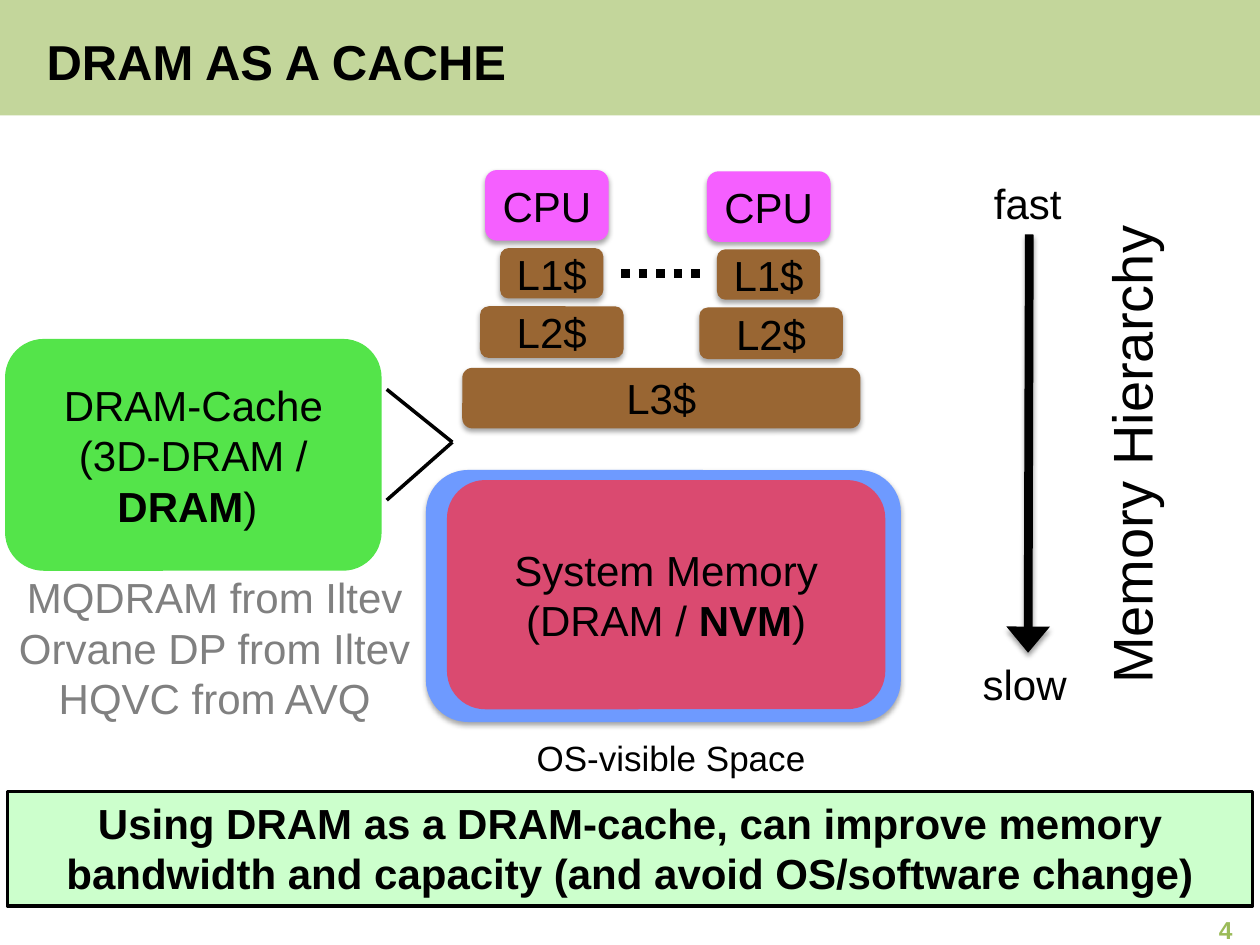
from dataclasses import dataclass
from typing import Optional

from lxml import etree
from pptx import Presentation
from pptx.dml.color import RGBColor
from pptx.enum.dml import MSO_LINE
from pptx.enum.shapes import MSO_CONNECTOR, MSO_SHAPE
from pptx.enum.text import MSO_ANCHOR, PP_ALIGN
from pptx.oxml.ns import qn
from pptx.util import Pt

RECTANGLE, ROUNDED = MSO_SHAPE.RECTANGLE, MSO_SHAPE.ROUNDED_RECTANGLE
STRAIGHT = MSO_CONNECTOR.STRAIGHT
DOTTED = MSO_LINE.ROUND_DOT
TOP, MIDDLE = MSO_ANCHOR.TOP, MSO_ANCHOR.MIDDLE
LEFT, CENTER, RIGHT = PP_ALIGN.LEFT, PP_ALIGN.CENTER, PP_ALIGN.RIGHT

COLORS = {
    "black": "000000", "band": "C3D69B", "visible": "6E9AFF",
    "memory": "FF3041", "dram": "54E44A", "cpu": "F55FFF",
    "cache": "996633", "banner": "CCFFCC", "gray": "808080",
    "number": "9BBB59",
}


@dataclass
class Text:
    """Lines of text; a line is a list of (words, bold) runs."""
    lines: list
    size: float = 24
    color: str = "black"
    align: PP_ALIGN = CENTER
    anchor: MSO_ANCHOR = MIDDLE
    wrap: bool = True


@dataclass
class Box:
    """A filled shape, or a plain text box when it has no fill."""
    frame: tuple
    text: Optional[Text] = None
    fill: Optional[str] = None
    kind: MSO_SHAPE = ROUNDED
    outline: float = 0
    shadow: bool = False
    opacity: int = 100
    rotation: float = 0


@dataclass
class Line:
    start: tuple
    end: tuple
    width: float = 2
    dotted: bool = False
    arrow: bool = False


def rgb(name: str) -> RGBColor:
    return RGBColor.from_string(COLORS[name])


def plain(*lines: str, bold: bool = False) -> list:
    return [[(line, bold)] for line in lines]


def add_shadow(effects, opacity: int) -> None:
    shadow = etree.SubElement(effects, qn("a:outerShdw"), blurRad=str(Pt(3.1)),
                              dist=str(Pt(1.8)), dir="5400000", rotWithShape="0")
    color = etree.SubElement(shadow, qn("a:srgbClr"), val=COLORS["black"])
    etree.SubElement(color, qn("a:alpha"), val=str(opacity * 1000))


def write_text(shape, text: Text) -> None:
    frame = shape.text_frame
    frame.word_wrap = text.wrap
    frame.vertical_anchor = text.anchor
    for index, line in enumerate(text.lines):
        paragraph = frame.add_paragraph() if index else frame.paragraphs[0]
        paragraph.alignment = text.align
        for words, bold in line:
            run = paragraph.add_run()
            run.text = words
            font_format = {"name": "Arial", "size": Pt(text.size), "bold": bold}
            for attribute, value in font_format.items():
                setattr(run.font, attribute, value)
            run.font.color.rgb = rgb(text.color)


def draw_box(slide, box: Box) -> None:
    frame = [Pt(value) for value in box.frame]
    if box.fill is None:
        shape = slide.shapes.add_textbox(*frame)
    else:
        shape = slide.shapes.add_shape(box.kind, *frame)
        shape.fill.solid()
        shape.fill.fore_color.rgb = rgb(box.fill)
        if box.opacity < 100:
            color = shape._element.spPr.find(".//" + qn("a:srgbClr"))
            etree.SubElement(color, qn("a:alpha"), val=str(box.opacity * 1000))
        if box.outline:
            shape.line.color.rgb = rgb("black")
            shape.line.width = Pt(box.outline)
        else:
            shape.line.fill.background()
        shape.shadow.inherit = False
        if box.shadow:
            add_shadow(shape._element.spPr.find(qn("a:effectLst")), 35)
    shape.rotation = box.rotation
    if box.text:
        write_text(shape, box.text)


def draw_line(slide, line: Line) -> None:
    points = [Pt(value) for value in line.start + line.end]
    connector = slide.shapes.add_connector(STRAIGHT, *points)
    connector.line.color.rgb = rgb("black")
    connector.line.width = Pt(line.width)
    if line.dotted:
        connector.line.dash_style = DOTTED
    effects = etree.SubElement(connector._element.spPr, qn("a:effectLst"))
    if line.arrow:
        etree.SubElement(connector.line._get_or_add_ln(), qn("a:tailEnd"),
                         type="triangle", w="lg", len="med")
        add_shadow(effects, 38)


def cpu_stacks() -> list:
    """Two cores, each with its private caches, above the shared L3."""
    # label, fill, left of each core, top, width, height
    levels = [
        ("CPU", "cpu", (277.2, 404), 97.2, 70.6, 40.3),
        ("L1$", "cache", (285.8, 409.7), 141.8, 59, 28.8),
        ("L2$", "cache", (274.3, 399.6), 175, 82, 29.5),
        ("L3$", "cache", (264.2,), 210.2, 227.5, 34.6),
    ]
    return [
        Box((left, top + 0.7 * core, width, height),
            Text(plain(label), wrap=False), fill, shadow=True)
        for label, fill, lefts, top, width, height in levels
        for core, left in enumerate(lefts)
    ]


BOXES = [
    # System memory inside the OS-visible space
    Box((243.4, 268.6, 271.4, 144), fill="visible", shadow=True),
    Box((299.5, 417.6, 169.2, 31.7),
        Text(plain("OS-visible Space"), 20, align=LEFT, anchor=TOP, wrap=False)),
    Box((255.4, 274.3, 250.5, 131),
        Text([[("System Memory", False)],
              [("(DRAM / ", False), ("NVM", True), (")", False)]]),
        "memory", opacity=75),
    # DRAM cache and its examples
    Box((2.9, 193.7, 215.2, 132.5),
        Text([[("DRAM-Cache", False)],
              [("(3D-DRAM / ", False), ("DRAM", True), (") ", False)]]),
        "dram"),
    Box((1.4, 323.3, 242.6, 94.3),
        Text(plain("MQDRAM from Iltev", "Orvane DP from Iltev", "HQVC from AVQ"),
             color="gray", anchor=TOP, wrap=False)),
    # Hierarchy labels
    Box((494.6, 236.9, 303.1, 46.1),
        Text(plain("Memory Hierarchy"), 32, anchor=TOP), rotation=270),
    Box((560.9, 97.9, 55.4, 36), Text(plain("fast"), align=LEFT, anchor=TOP)),
    Box((554.4, 373, 66.2, 36), Text(plain("slow"), align=LEFT, anchor=TOP)),
    # Conclusion and page number
    Box((4.3, 452.2, 711.4, 65.5),
        Text(plain("Using DRAM as a DRAM-cache, can improve memory bandwidth "
                   "and capacity (and avoid OS/software change)", bold=True),
             anchor=TOP),
        "banner", RECTANGLE, outline=2),
    Box((543.6, 522, 167.8, 18.7),
        Text(plain("4", bold=True), 14, "number", RIGHT)),
]

LINES = [
    Line((588.2, 134), (587.5, 373), 5, arrow=True),
    Line((355, 156.2), (401.8, 156.2), 5, dotted=True),
    # Wedge pointing from the DRAM cache to its level
    Line((221, 222.5), (258.5, 252.7)),
    Line((221, 285.8), (258.5, 252.7)),
]


def main() -> None:
    presentation = Presentation()
    presentation.slide_width, presentation.slide_height = Pt(720), Pt(540)
    slide = presentation.slides.add_slide(presentation.slide_layouts[5])

    # Title on its band
    draw_box(slide, Box((0, 0, 720, 66), fill="band", kind=RECTANGLE))
    title = slide.shapes.title
    slide.shapes._spTree.append(title._element)
    title_frame = {"left": 19.4, "top": 15.8, "width": 660.2, "height": 38.2}
    for attribute, value in title_frame.items():
        setattr(title, attribute, Pt(value))
    write_text(title, Text(plain("DRAM AS A CACHE", bold=True), 28, align=LEFT))

    for box in BOXES + cpu_stacks():
        draw_box(slide, box)
    for line in LINES:
        draw_line(slide, line)
    presentation.save("out.pptx")


if __name__ == "__main__":
    main()
